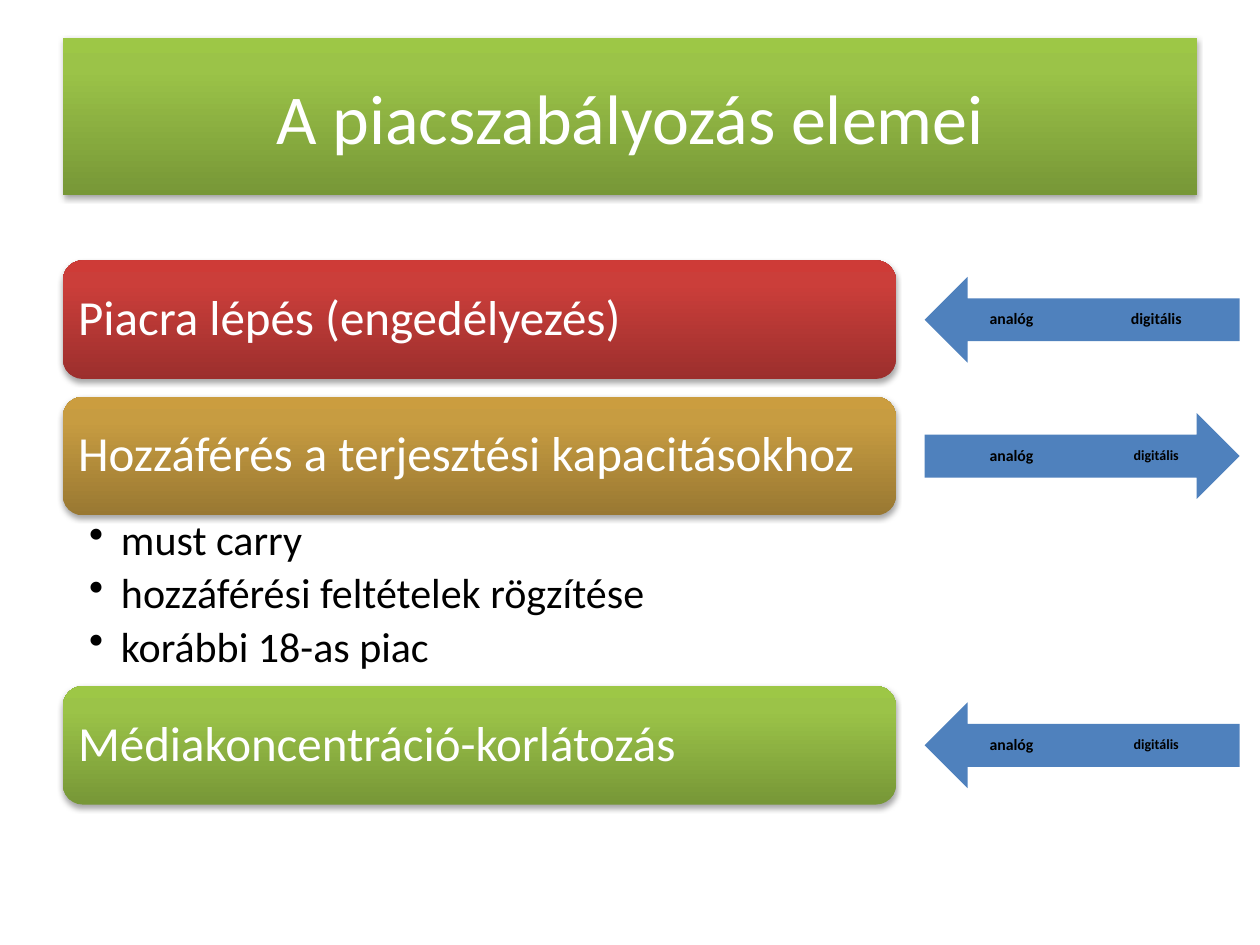
from dataclasses import dataclass

from lxml import etree
from pptx import Presentation
from pptx.dml.color import RGBColor
from pptx.enum.shapes import MSO_SHAPE
from pptx.enum.text import MSO_ANCHOR, PP_ALIGN
from pptx.oxml.ns import qn
from pptx.util import Cm, Pt

ROUNDED, ARROW = MSO_SHAPE.ROUNDED_RECTANGLE, MSO_SHAPE.RIGHT_ARROW
LEFT, CENTER = PP_ALIGN.LEFT, PP_ALIGN.CENTER
TOP, MIDDLE = MSO_ANCHOR.TOP, MSO_ANCHOR.MIDDLE


@dataclass(frozen=True)
class Theme:
    """Colours, gradients and type sizes of the slide."""
    font: str = "Calibri"
    light: str = "FFFFFF"
    dark: str = "000000"
    arrow: str = "4F81BD"
    green: tuple = ("779737", "9BC348", "9DC746")
    red: tuple = ("9C2F2D", "CB3E3A", "CE3B37")
    gold: tuple = ("997832", "C79C41", "CB9D3F")
    stops: tuple = (0, 80, 100)
    title: float = 40
    banner: float = 28
    bullet: float = 24
    label: float = 9
    small_label: float = 8


THEME = Theme()


def add_xml(parent, tag, **attributes):
    """Append a DrawingML element and return it."""
    values = {name: str(value) for name, value in attributes.items()}
    return etree.SubElement(parent, qn(tag), values)


def paint_glossy(shape, colors):
    """Give a shape a three-stop vertical gradient and a soft shadow."""
    shape.fill.gradient()
    shape.fill.gradient_angle = 90
    properties = shape.element.spPr
    stops = properties.find(".//" + qn("a:gsLst"))
    for stop in list(stops):
        stops.remove(stop)
    for position, color in zip(THEME.stops, colors):
        stop = add_xml(stops, "a:gs", pos=position * 1000)
        add_xml(stop, "a:srgbClr", val=color)
    shape.line.fill.background()
    shape.shadow.inherit = False
    shadow = add_xml(properties.find(qn("a:effectLst")), "a:outerShdw",
                     blurRad=Pt(3.1), dist=Pt(1.8), dir=5400000, rotWithShape=0)
    add_xml(add_xml(shadow, "a:srgbClr", val=THEME.dark), "a:alpha", val=35000)


def write(shape, lines, size, color, align=LEFT, anchor=MIDDLE, bold=False,
          margins=(0, 0, 0, 0), line_spacing=0.9):
    """Write formatted paragraphs into a shape and return them."""
    frame = shape.text_frame
    sides = ("margin_left", "margin_top", "margin_right", "margin_bottom")
    settings = {"word_wrap": True, "vertical_anchor": anchor,
                **{side: Cm(margin) for side, margin in zip(sides, margins)}}
    for name, value in settings.items():
        setattr(frame, name, value)
    frame.text = "\n".join(lines)
    for paragraph in frame.paragraphs:
        paragraph.alignment = align
        paragraph.line_spacing = line_spacing
        for run in paragraph.runs:
            for name, value in {"name": THEME.font, "size": Pt(size), "bold": bold}.items():
                setattr(run.font, name, value)
            run.font.color.rgb = RGBColor.from_string(color)
    return frame.paragraphs


def place_title(slide, box, text):
    """Move the title placeholder into its box and format it."""
    title = slide.shapes.title
    for side, length in zip(("left", "top", "width", "height"), box):
        setattr(title, side, Cm(length))
    paint_glossy(title, THEME.green)
    write(title, [text], THEME.title, THEME.light, CENTER,
          margins=(0.25, 0.13, 0.25, 0.13), line_spacing=1)


def place_banner(slide, box, text, colors):
    """Draw a rounded topic banner."""
    banner = slide.shapes.add_shape(ROUNDED, *map(Cm, box))
    paint_glossy(banner, colors)
    write(banner, [text], THEME.banner, THEME.light, margins=(0.19,) * 4)


def place_bullets(slide, box, lines):
    """Write the bulleted details below a banner."""
    details = slide.shapes.add_textbox(*map(Cm, box))
    paragraphs = write(details, lines, THEME.bullet, THEME.dark, anchor=TOP,
                       margins=(0.53, 0.08, 0.48, 0.08))
    for paragraph in paragraphs:
        paragraph.level = 1
        paragraph.space_after = Pt(4.5)
        properties = paragraph._p.get_or_add_pPr()
        properties.set("marL", str(Cm(0.64)))
        properties.set("indent", str(-Cm(0.64)))
        add_xml(properties, "a:buChar", char="•")


def place_arrow(slide, box, rotation, digital_size):
    """Draw a direction arrow with its analogue and digital labels."""
    left, top, width, height = box
    arrow = slide.shapes.add_shape(ARROW, *map(Cm, box))
    arrow.rotation = rotation
    arrow.fill.solid()
    arrow.fill.fore_color.rgb = RGBColor.from_string(THEME.arrow)
    arrow.line.fill.background()
    arrow.shadow.inherit = False
    labels = (("analóg", 0.53, THEME.label), ("digitális", 3.45, digital_size))
    for text, offset, size in labels:
        label = slide.shapes.add_textbox(
            Cm(left + offset), Cm(top + height / 4), Cm(2.44), Cm(height / 2))
        write(label, [text], size, THEME.dark, CENTER, bold=True)


def place_topics(slide, box):
    """Stack the banners with their details, each beside its arrow."""
    left, top, width, banner_height = box
    arrow_left, arrow_width, arrow_height = left + 17.37, 6.35, 1.73
    gap, details_height = 0.36, 3.44
    topics = (
        ("Piacra lépés (engedélyezés)", THEME.red, 180, THEME.label, ()),
        ("Hozzáférés a terjesztési kapacitásokhoz", THEME.gold, 0, THEME.small_label,
         ("must carry", "hozzáférési feltételek rögzítése", "korábbi 18-as piac")),
        ("Médiakoncentráció-korlátozás", THEME.green, 180, THEME.small_label, ()),
    )
    for text, colors, rotation, digital_size, details in topics:
        place_banner(slide, (left, top, width, banner_height), text, colors)
        arrow_top = top + (banner_height - arrow_height) / 2
        place_arrow(slide, (arrow_left, arrow_top, arrow_width, arrow_height),
                    rotation, digital_size)
        top += banner_height
        if details:
            place_bullets(slide, (left, top, width, details_height), details)
        top += details_height if details else gap


def main():
    """Build and save the slide."""
    presentation = Presentation()
    presentation.slide_width, presentation.slide_height = Cm(25.4), Cm(19.05)
    slide = presentation.slides.add_slide(presentation.slide_layouts[5])
    place_title(slide, (1.27, 0.76, 22.86, 3.18), "A piacszabályozás elemei")
    place_topics(slide, (1.27, 5.25, 16.79, 2.39))
    presentation.save("out.pptx")


if __name__ == "__main__":
    main()
